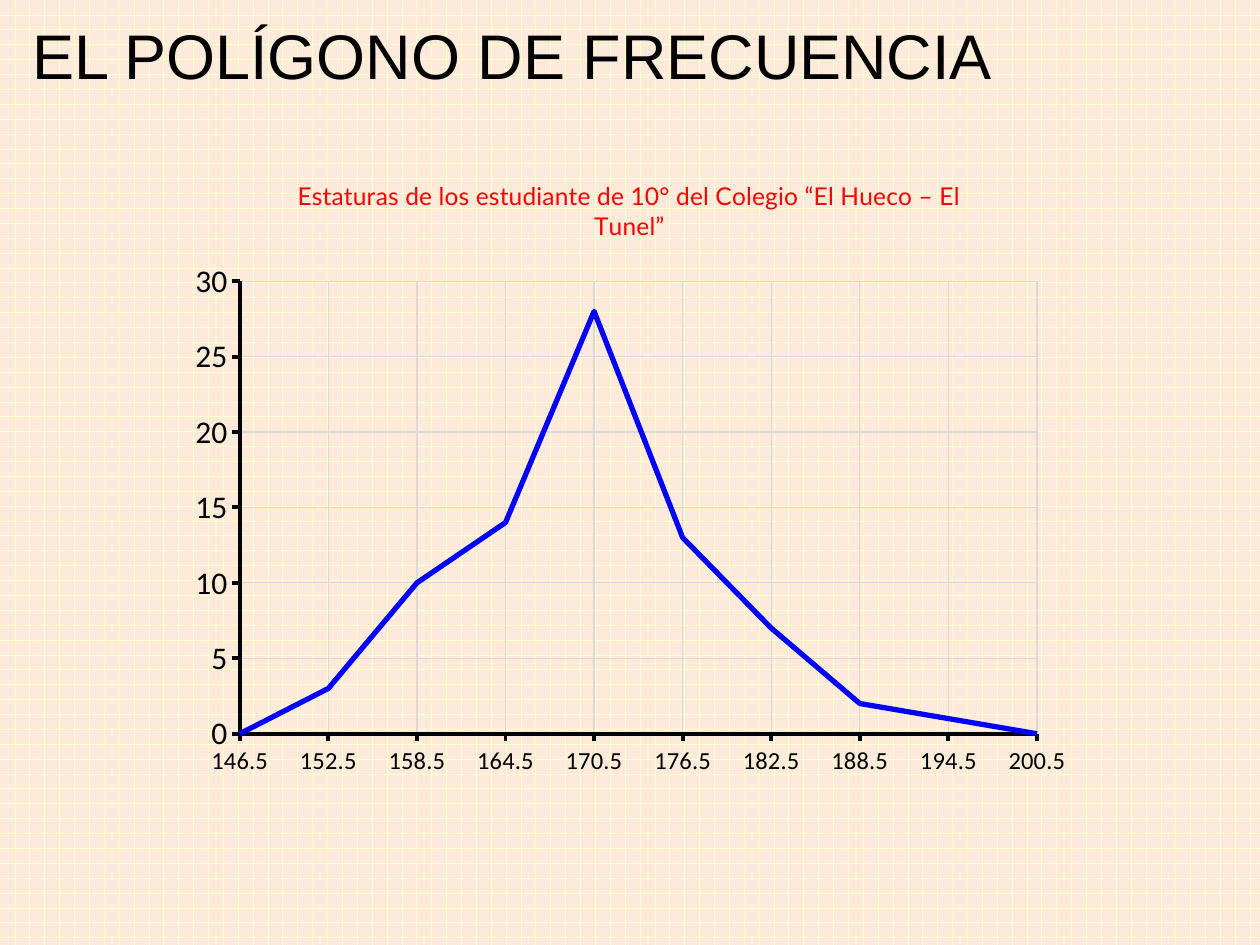
from lxml import etree
from pptx import Presentation
from pptx import util as u
from pptx.chart.data import CategoryChartData
from pptx.dml.color import RGBColor
from pptx.enum import chart as ch, dml, text
from pptx.oxml import ns

BLACK, RED, BLUE, GREY = "000000", "FF0000", "0000FF", "D9D9D9"


def rgb(value):
    return RGBColor.from_string(value)


class SlideBuilder:
    font = "Calibri"

    def __init__(self, prs):
        self.s = prs.slides.add_slide(prs.slide_layouts[6])

    def background(self, fore, back):
        fill = self.s.background.fill
        fill.patterned()
        fill.pattern = dml.MSO_PATTERN.HORIZONTAL_BRICK
        fill.fore_color.rgb = rgb(fore)
        fill.back_color.rgb = rgb(back)

    def style(self, font, size, color, name=None):
        font.name = name or self.font
        font.size = u.Pt(size)
        font.bold = False
        font.color.rgb = rgb(color)

    def line(self, fmt, color, width):
        fmt.line.color.rgb = rgb(color)
        fmt.line.width = u.Pt(width)

    def heading(self, words, box):
        sp = self.s.shapes.add_textbox(*map(u.Inches, box))
        tf = sp.text_frame
        tf.word_wrap = True
        tf.auto_size = text.MSO_AUTO_SIZE.SHAPE_TO_FIT_TEXT
        tf.text = words
        self.style(tf.paragraphs[0].runs[0].font, 36, BLACK, "Arial")

    def axis(self, axis, size):
        axis.has_major_gridlines = True
        self.line(axis.major_gridlines.format, GREY, 0.75)
        self.line(axis.format, BLACK, 2.25)
        axis.major_tick_mark = ch.XL_TICK_MARK.OUTSIDE
        axis.minor_tick_mark = ch.XL_TICK_MARK.NONE
        self.style(axis.tick_labels.font, size, BLACK)

    def plot_layout(self, chart, **edges):
        area = chart.element.find(".//" + ns.qn("c:plotArea"))
        for old in area.findall(ns.qn("c:layout")):
            area.remove(old)
        layout = etree.Element(ns.qn("c:layout"))
        manual = etree.SubElement(layout, ns.qn("c:manualLayout"))
        settings = dict(layoutTarget="inner", xMode="edge", yMode="edge", **edges)
        for tag, value in settings.items():
            etree.SubElement(manual, ns.qn("c:" + tag), val=str(value))
        area.insert(0, layout)

    def points_on_ticks(self, chart):
        val_ax = chart.element.find(".//" + ns.qn("c:valAx"))
        for old in val_ax.findall(ns.qn("c:crossBetween")):
            val_ax.remove(old)
        cross = etree.Element(ns.qn("c:crossBetween"), val="midCat")
        val_ax.find(ns.qn("c:crosses")).addnext(cross)

    def polygon(self, title, cats, values, box):
        data = CategoryChartData()
        data.categories = cats
        data.add_series("Series 1", values)
        chart = self.s.shapes.add_chart(
            ch.XL_CHART_TYPE.LINE, *map(u.Inches, box), data).chart
        self.style(chart.font, 18, BLACK)
        chart.has_legend = False
        chart.has_title = True
        p = chart.chart_title.text_frame.paragraphs[0]
        p.text = title
        self.style(p.runs[0].font, 14, RED, "Lato")
        chart.chart_title.include_in_layout = False

        self.axis(chart.category_axis, 14)
        self.axis(chart.value_axis, 18)
        chart.value_axis.minimum_scale = 0
        chart.value_axis.maximum_scale = 30
        chart.value_axis.major_unit = 5

        plot = chart.plots[0]
        plot.vary_by_categories = False
        series = plot.series[0]
        series.smooth = False
        series.marker.style = ch.XL_MARKER_STYLE.NONE
        self.line(series.format, BLUE, 3)
        self.plot_layout(chart, x=0.07, y=0.2, w=0.88, h=0.71)
        self.points_on_ticks(chart)


def main():
    prs = Presentation()
    prs.slide_width, prs.slide_height = u.Inches(10), u.Inches(7.5)
    b = SlideBuilder(prs)
    b.background("FFFFCC", "FDEADA")
    b.heading("EL POLÍGONO DE FRECUENCIA", (0.16, 0.08, 9.67, 0.71))
    b.polygon(
        "Estaturas de los estudiante de 10° del Colegio “El Hueco – El Tunel”",
        [str(146.5 + 6 * i) for i in range(10)],
        [0, 3, 10, 14, 28, 13, 7, 2, 1, 0],
        (1.4, 1.22, 7.19, 5.06))
    prs.save("out.pptx")


if __name__ == "__main__":
    main()
